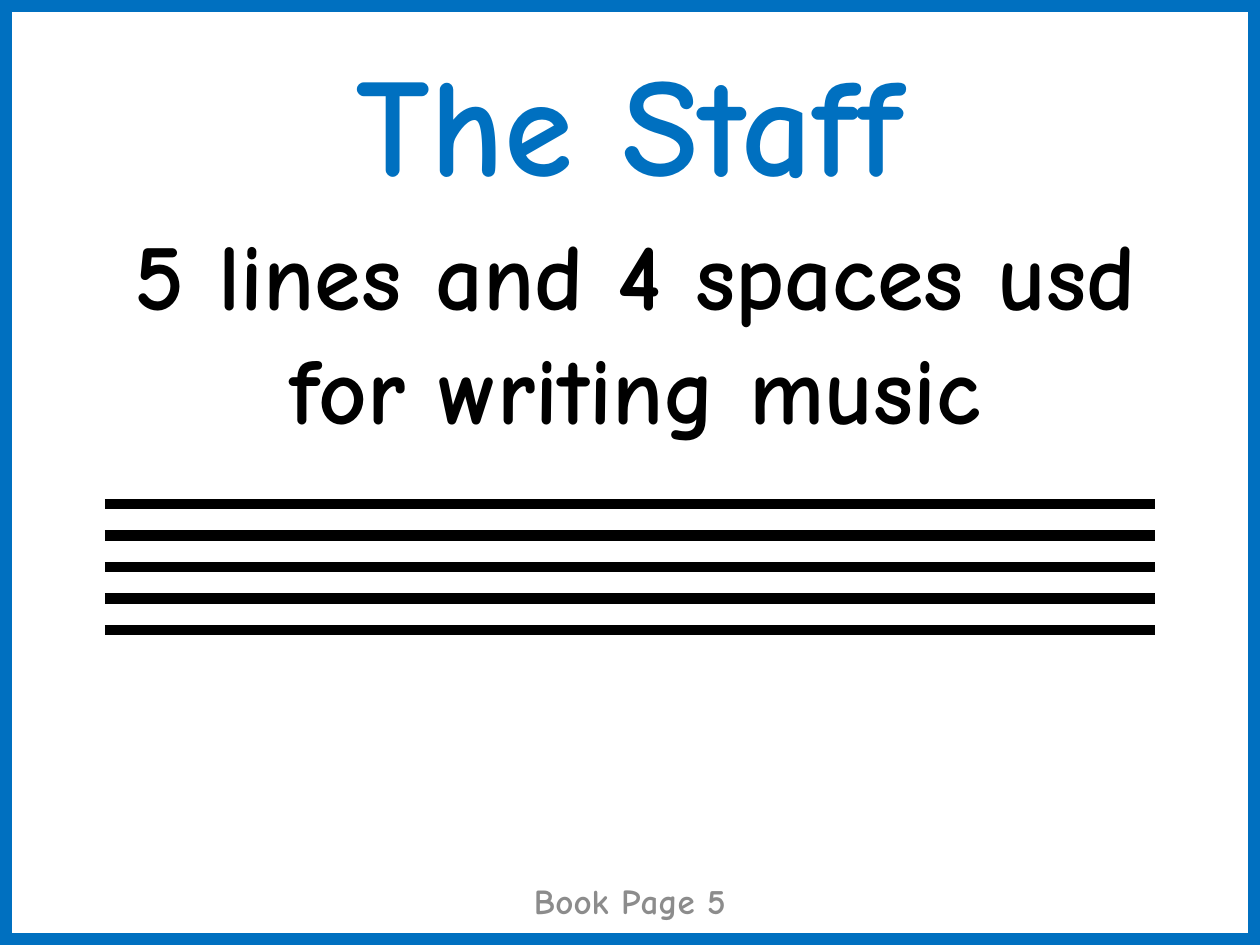
from pptx import Presentation
from pptx import util as u
from pptx.dml.color import RGBColor
from pptx.enum import shapes, text
from pptx.oxml.ns import qn
from lxml import etree

BLUE = RGBColor(0x00, 0x70, 0xC0)
BLACK = RGBColor(0x00, 0x00, 0x00)
GREY = RGBColor(0x8C, 0x8C, 0x8C)
FONT = "Comic Neue"
SCALE = 7620
WIDTH, HEIGHT = 1200, 900
MID, TOP = text.MSO_ANCHOR.MIDDLE, text.MSO_ANCHOR.TOP


def px(*nums):
    return [u.Emu(n * SCALE) for n in nums]


def apply(item, form):
    for key, value in form.items():
        setattr(item, key, value)


def add_text(slide, words, box, size, color, anchor=MID):
    frame = slide.shapes.add_textbox(*px(*box)).text_frame
    apply(frame, {"word_wrap": True, "vertical_anchor": anchor})
    para = frame.paragraphs[0]
    para.alignment = text.PP_ALIGN.CENTER
    run = para.add_run()
    run.text = words
    apply(run.font, {"name": FONT, "size": u.Pt(size), "bold": True})
    run.font.color.rgb = color


def add_frame(slide, color, width):
    rect = slide.shapes.add_shape(
        shapes.MSO_SHAPE.RECTANGLE, *px(0, 0, WIDTH, HEIGHT))
    rect.shadow.inherit = False
    rect.fill.background()
    rect.line.color.rgb = color
    rect.line.width = u.Pt(width)


def add_line(slide, ends, color, width):
    line = slide.shapes.add_connector(
        shapes.MSO_CONNECTOR.STRAIGHT, *px(*ends))
    line.line.color.rgb = color
    line.line.width = u.Pt(width)
    etree.SubElement(line._element.spPr, qn("a:effectLst"))


def add_staff(slide, left, right, top, gap):
    for row in range(5):
        y = top + row * gap
        add_line(slide, (left, y, right, y), BLACK, 6)


def main():
    deck = Presentation()
    deck.slide_width, deck.slide_height = px(WIDTH, HEIGHT)
    slide = deck.slides.add_slide(deck.slide_layouts[6])
    add_text(slide, "The Staff", (30, 40, 1140, 150), 80, BLUE)
    add_text(slide, "5 lines and 4 spaces usd for writing music",
             (50, 200, 1110, 230), 54, BLACK, TOP)
    add_frame(slide, BLUE, 14)
    add_text(slide, "Book Page 5", (410, 834, 380, 48), 20, GREY)
    add_staff(slide, 100, 1100, 480, 30)
    deck.save("out.pptx")


if __name__ == "__main__":
    main()
